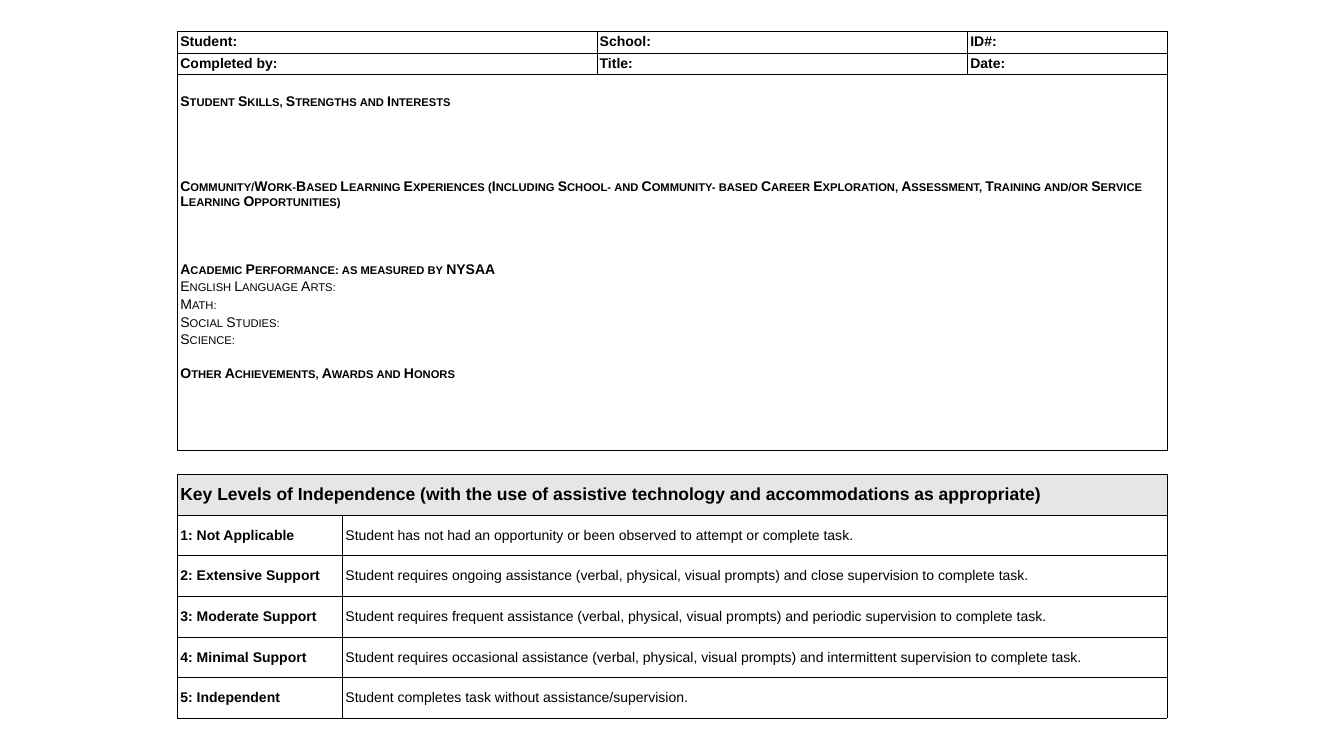
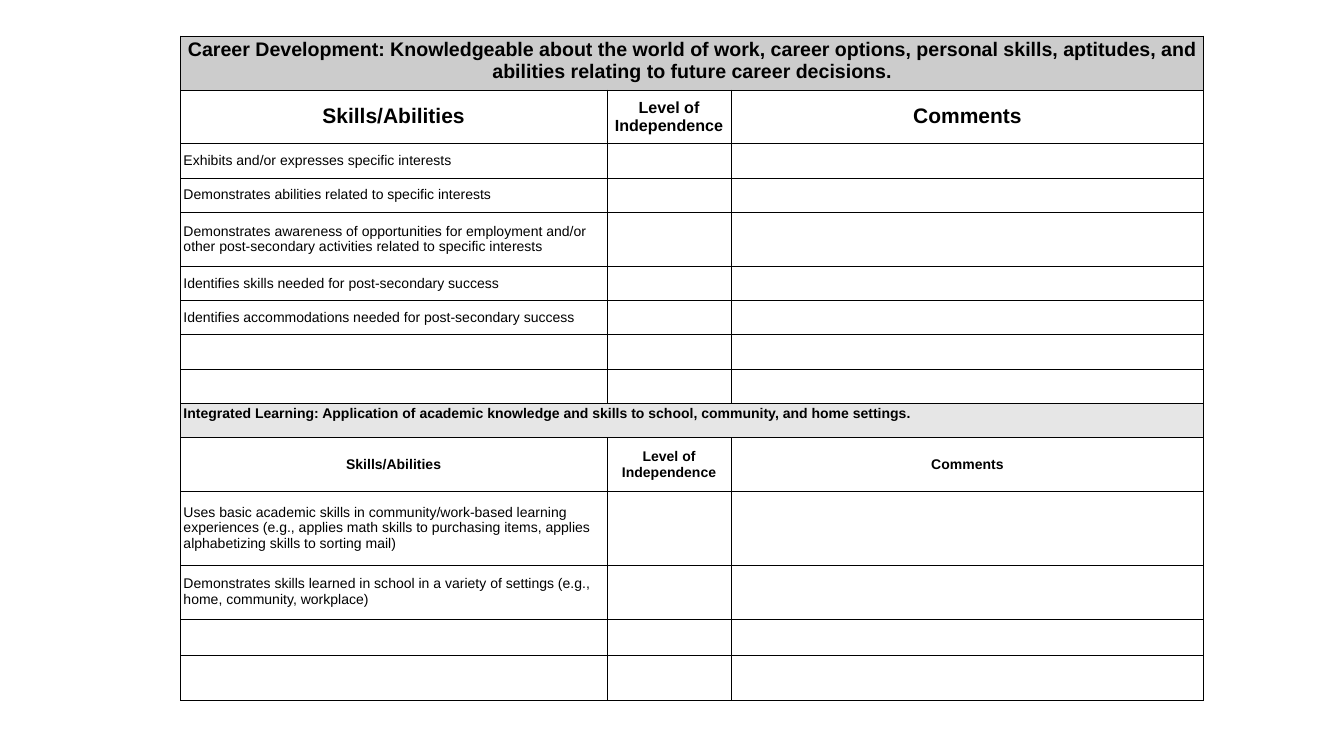
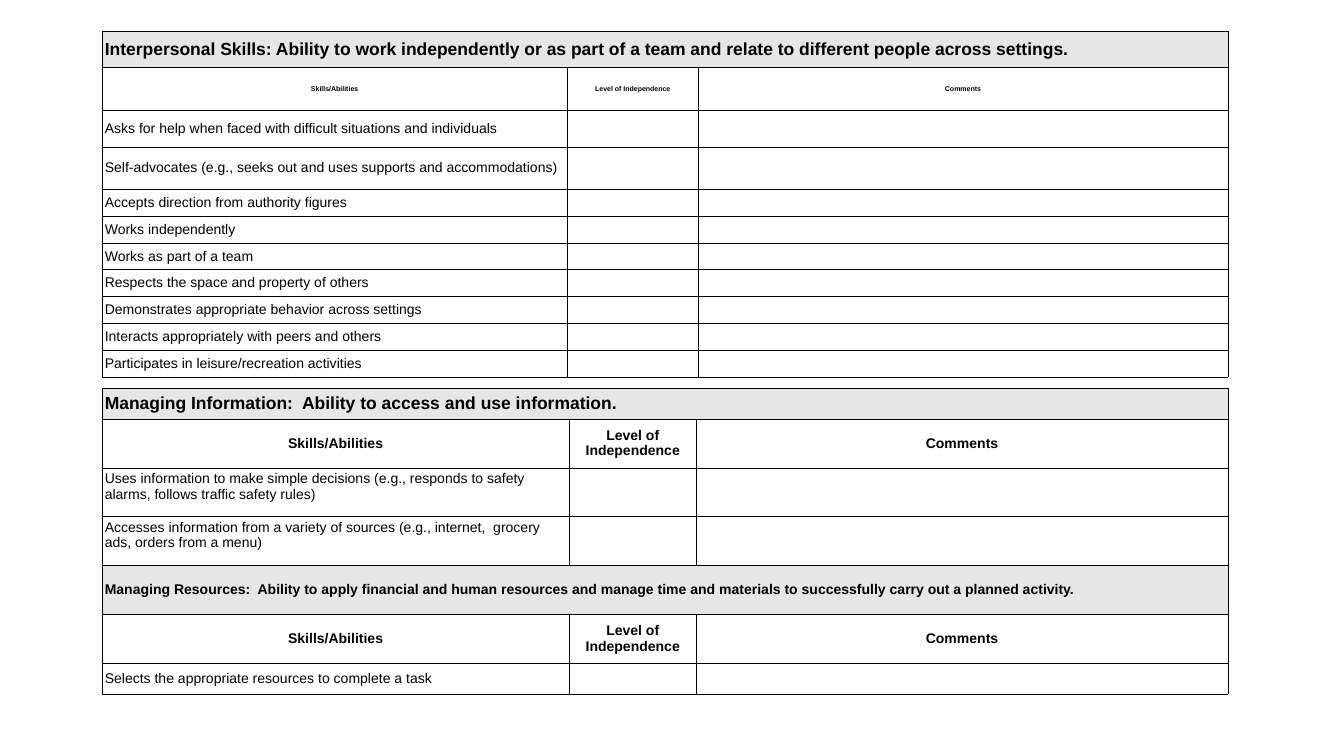
from dataclasses import dataclass

from lxml import etree
from pptx import Presentation
from pptx.dml.color import RGBColor
from pptx.enum.text import MSO_ANCHOR, PP_ALIGN
from pptx.oxml.ns import qn
from pptx.util import Pt

LEFT, CENTER, JUSTIFY = PP_ALIGN.LEFT, PP_ALIGN.CENTER, PP_ALIGN.JUSTIFY
TOP, MIDDLE = MSO_ANCHOR.TOP, MSO_ANCHOR.MIDDLE

FONT = "Arial"
BLACK, GRAY, PALE = "000000", "CCCCCC", "E6E6E6"
BODY, LARGE = 20, 25
INSET, LINE = 4.3, 0.5
HEADS = ("Skills/Abilities", "Level of Independence", "Comments")


@dataclass
class Para:
    text: str
    size: float = BODY
    bold: bool = False
    align: int = LEFT
    before: float = 0
    small: bool = False


@dataclass
class Cell:
    paras: tuple[Para, ...] = ()
    anchor: int = MIDDLE
    fill: str = ""
    top: float = INSET


@dataclass
class Row:
    """One table row; a single cell spans the full width."""
    height: float
    cells: tuple[Cell, ...]


@dataclass
class Grid:
    left: float
    top: float
    cols: tuple[float, ...]
    rows: list[Row]


def color(value: str) -> RGBColor:
    return RGBColor.from_string(value)


def band(height: float, text: str, size: float = LARGE, align: int = JUSTIFY,
         fill: str = PALE, anchor: int = MIDDLE) -> Row:
    return Row(height, (Cell((Para(text, size, True, align),), anchor, fill),))


def heads(height: float, sizes: tuple[float, ...] = (BODY,) * 3) -> Row:
    return Row(height, tuple(Cell((Para(text, size, True, CENTER),))
                             for text, size in zip(HEADS, sizes)))


def task(height: float, text: str = "", anchor: int = MIDDLE) -> Row:
    """A skill to rate, with empty level and comment cells."""
    first = Cell((Para(text),), anchor) if text else Cell()
    return Row(height, (first, Cell(), Cell()))


def labels(height: float, *texts: str) -> Row:
    return Row(height, tuple(Cell((Para(text, bold=True),)) for text in texts))


def level(height: float, name: str, text: str) -> Row:
    return Row(height, (Cell((Para(name, bold=True),)), Cell((Para(text),))))


def topic(text: str, before: float = 0) -> Para:
    return Para(text, bold=True, before=before, small=True)


def subject(text: str) -> Para:
    return Para(text, before=3, small=True)


def add_border(cell) -> None:
    props = cell._tc.get_or_add_tcPr()
    for side in ("a:lnL", "a:lnR", "a:lnT", "a:lnB"):
        line = etree.SubElement(props, qn(side), w=str(Pt(LINE)))
        fill = etree.SubElement(line, qn("a:solidFill"))
        etree.SubElement(fill, qn("a:srgbClr"), val=BLACK)


def write(para, item: Para) -> None:
    para.text = item.text
    para.alignment = item.align
    if item.before:
        para.space_before = Pt(item.before)
    for run in para.runs:
        font = run.font
        font.name, font.size, font.bold = FONT, Pt(item.size), item.bold
        font.color.rgb = color(BLACK)
        if item.small:
            run._r.get_or_add_rPr().set("cap", "small")


def fill_cell(cell, item: Cell) -> None:
    cell.margin_left = cell.margin_right = cell.margin_bottom = Pt(INSET)
    cell.margin_top = Pt(item.top)
    cell.vertical_anchor = item.anchor
    if item.fill:
        cell.fill.solid()
        cell.fill.fore_color.rgb = color(item.fill)
    else:
        cell.fill.background()
    frame = cell.text_frame
    for i, para in enumerate(item.paras):
        write(frame.add_paragraph() if i else frame.paragraphs[0], para)


def draw_grid(slide, grid: Grid) -> None:
    heights = [row.height for row in grid.rows]
    table = slide.shapes.add_table(
        len(heights), len(grid.cols), Pt(grid.left), Pt(grid.top),
        Pt(sum(grid.cols)), Pt(sum(heights))).table
    table.first_row = table.horz_banding = False
    for col, width in zip(table.columns, grid.cols):
        col.width = Pt(width)
    last = len(grid.cols) - 1
    for r, row in enumerate(grid.rows):
        table.rows[r].height = Pt(row.height)
        for cell in table.rows[r].cells:
            add_border(cell)
        if len(row.cells) == 1:
            table.cell(r, 0).merge(table.cell(r, last))
        for c, item in enumerate(row.cells):
            fill_cell(table.cell(r, c), item)


PROFILE = Cell((
    topic("Student Skills, Strengths and Interests"),
    topic("Community/Work-Based Learning Experiences (Including School- and Community- based "
          "Career Exploration, Assessment, Training and/or Service Learning Opportunities)", 98),
    topic("Academic Performance: as measured by NYSAA", 74),
    subject("English Language Arts:"),
    subject("Math:"),
    subject("Social Studies:"),
    subject("Science:"),
    topic("Other Achievements, Awards and Honors", 26),
), TOP, top=28)

STUDENT = Grid(253.4, 44.6, (599, 529.5, 285.5), [
    labels(31, "Student:", "School:", "ID#:"),
    labels(31, "Completed by:", "Title:", "Date:"),
    Row(537, (PROFILE,)),
])

LEVELS = Grid(253.4, 677.5, (235.8, 1178.2), [
    band(58.1, "Key Levels of Independence (with the use of assistive technology and "
               "accommodations as appropriate)", align=LEFT),
    *(level(58.1, name, text) for name, text in (
        ("1: Not Applicable",
         "Student has not had an opportunity or been observed to attempt or complete task."),
        ("2: Extensive Support",
         "Student requires ongoing assistance (verbal, physical, visual prompts) and "
         "close supervision to complete task."),
        ("3: Moderate Support",
         "Student requires frequent assistance (verbal, physical, visual prompts) and "
         "periodic supervision to complete task."),
        ("4: Minimal Support",
         "Student requires occasional assistance (verbal, physical, visual prompts) and "
         "intermittent supervision to complete task."),
        ("5: Independent", "Student completes task without assistance/supervision."),
    )),
])

CAREER = Grid(257.8, 51.1, (609.1, 177.8, 674.6), [
    band(77, "Career Development: Knowledgeable about the world of work, career options, "
             "personal skills, aptitudes, and abilities relating to future career decisions.",
         28, CENTER, GRAY, TOP),
    heads(77, (30, 23, 30)),
    task(49, "Exhibits and/or expresses specific interests"),
    task(49, "Demonstrates abilities related to specific interests"),
    task(77, "Demonstrates awareness of opportunities for employment and/or other "
             "post-secondary activities related to specific interests"),
    task(49, "Identifies skills needed for post-secondary success"),
    task(49, "Identifies accommodations needed for post-secondary success"),
    task(49),
    task(49),
    band(49, "Integrated Learning: Application of academic knowledge and skills to school, "
             "community, and home settings.", BODY, LEFT, anchor=TOP),
    heads(77),
    task(105, "Uses basic academic skills in community/work-based learning experiences "
              "(e.g., applies math skills to purchasing items, applies alphabetizing skills "
              "to sorting mail)"),
    task(77, "Demonstrates skills learned in school in a variety of settings (e.g., home, "
             "community, workplace)"),
    task(52.6),
    task(64),
])

PEOPLE = Grid(145.4, 43.9, (665.3, 186.5, 757), [
    band(52.6, "Interpersonal Skills: Ability to work independently or as part of a team "
               "and relate to different people across settings."),
    heads(60.5, (10, 10, 10)),
    task(52.6, "Asks for help when faced with difficult situations and individuals"),
    task(60.5, "Self-advocates (e.g., seeks out and uses supports and accommodations)"),
    *(task(38.4, text) for text in (
        "Accepts direction from authority figures",
        "Works independently",
        "Works as part of a team",
        "Respects the space and property of others",
        "Demonstrates appropriate behavior across settings",
        "Interacts appropriately with peers and others",
        "Participates in leisure/recreation activities",
    )),
])

MANAGE = Grid(145.4, 554.4, (668.2, 180.8, 760), [
    band(44, "Managing Information:  Ability to access and use information."),
    heads(69.8),
    task(69.8, "Uses information to make simple decisions (e.g., responds to safety alarms, "
               "follows traffic safety rules)", TOP),
    task(69.8, "Accesses information from a variety of sources (e.g., internet,  grocery ads, "
               "orders from a menu)", TOP),
    band(69.8, "Managing Resources:  Ability to apply financial and human resources and manage "
               "time and materials to successfully carry out a planned activity.", BODY),
    heads(69.8),
    task(44, "Selects the appropriate resources to complete a task"),
])


def main() -> None:
    deck = Presentation()
    deck.slide_width, deck.slide_height = Pt(1920), Pt(1080)
    blank = deck.slide_layouts[6]
    for grids in ((STUDENT, LEVELS), (CAREER,), (PEOPLE, MANAGE)):
        slide = deck.slides.add_slide(blank)
        for grid in grids:
            draw_grid(slide, grid)
    deck.save("out.pptx")


if __name__ == "__main__":
    main()
